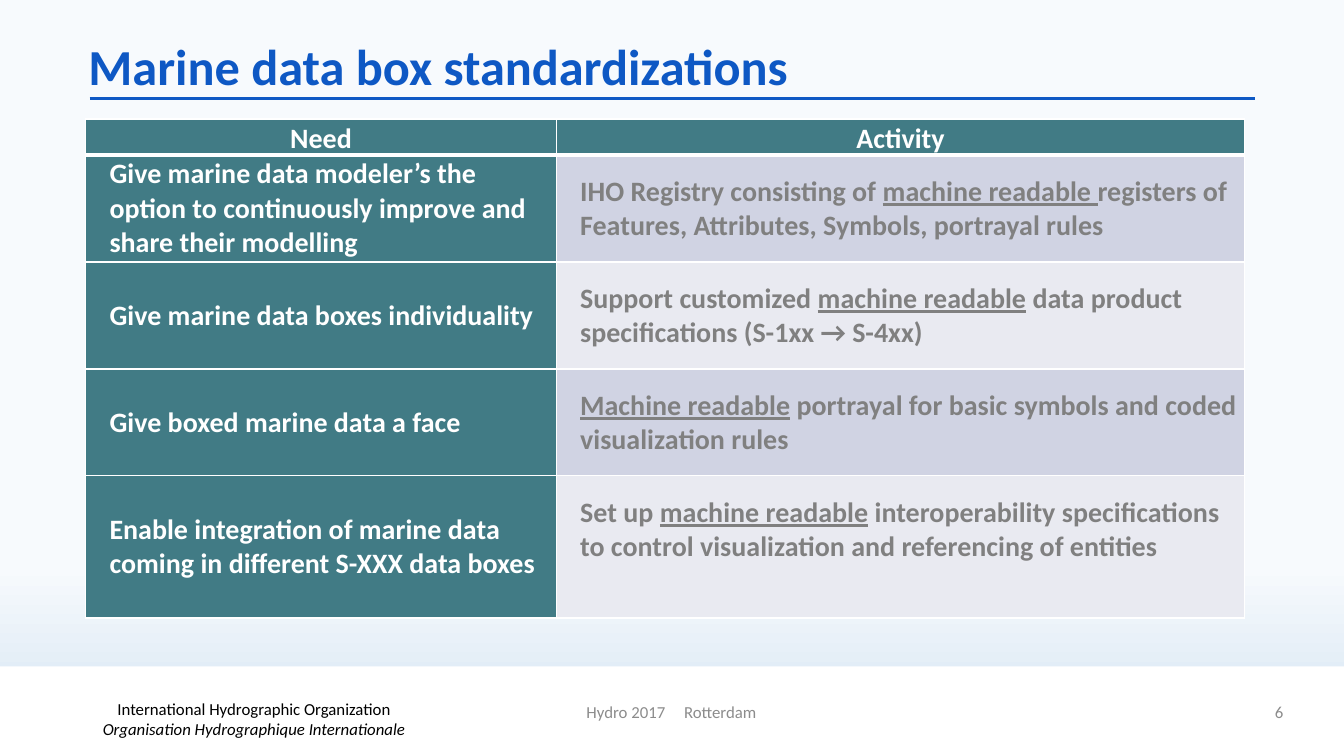
"""Builds the slide on marine data box standardizations."""
from lxml import etree
from pptx import Presentation
from pptx.dml.color import RGBColor
from pptx.enum.shapes import MSO_CONNECTOR, MSO_SHAPE
from pptx.enum.text import MSO_ANCHOR, PP_ALIGN
from pptx.oxml.ns import qn
from pptx.util import Cm, Pt

LEFT, CENTER, RIGHT = PP_ALIGN.LEFT, PP_ALIGN.CENTER, PP_ALIGN.RIGHT
MIDDLE, TOP = MSO_ANCHOR.MIDDLE, MSO_ANCHOR.TOP
STRAIGHT, RECTANGLE = MSO_CONNECTOR.STRAIGHT, MSO_SHAPE.RECTANGLE
WHITE = RGBColor(0xFF, 0xFF, 0xFF)
BLACK = RGBColor(0, 0, 0)
BLUE = RGBColor(0x0E, 0x58, 0xC4)
TEAL = RGBColor(0x41, 0x7B, 0x85)
GREY = RGBColor(0x80, 0x80, 0x80)
FOOTER_GREY = RGBColor(0x8C, 0x8C, 0x8C)
BANDS = (RGBColor(0xD0, 0xD3, 0xE3), RGBColor(0xE9, 0xEA, 0xF1))
SKY = ((0.75, RGBColor(0xF7, 0xFA, 0xFD)), (1.0, RGBColor(0xD0, 0xE2, 0xF1)))

TITLE = "Marine data box standardizations"
ORGANIZATION = ("International Hydrographic Organization",
                "Organisation Hydrographique Internationale")
EVENT = "Hydro 2017\tRotterdam"
PAGE = "6"
HEADINGS = ("Need", "Activity")
ROWS = [
    ("Give marine data modeler’s the option to continuously improve and share their modelling",
     ("IHO Registry consisting of ", "machine readable ",
      "registers of Features, Attributes, Symbols, portrayal rules")),
    ("Give marine data boxes individuality",
     ("Support customized ", "machine readable",
      " data product specifications (S-1xx → S-4xx)")),
    ("Give boxed marine data a face",
     ("", "Machine readable", " portrayal for basic symbols and coded visualization rules")),
    ("Enable integration of marine data coming in different S-XXX data boxes",
     ("Set up ", "machine readable",
      " interoperability specifications to control visualization and referencing of entities")),
]
COLUMN_WIDTHS = (11.86, 17.35)
ROW_HEIGHTS = (0.84, 2.57, 2.57, 2.57, 3.58)
SLIDE_WIDTH, SLIDE_HEIGHT = 33.87, 19.05
FOOTER_TOP, FOOTER_HEIGHT = 17.43, 1.02

TITLE_FORMAT = {"size": Pt(36), "bold": True}
CELL_FORMAT = {"size": Pt(20), "bold": True}
FOOTER_FORMAT = {"size": Pt(12)}


def add_run(paragraph, text, color, formats):
    run = paragraph.add_run()
    run.text = text
    for name, value in {"name": "Calibri", **formats}.items():
        setattr(run.font, name, value)
    run.font.color.rgb = color


def add_label(slide, box, lines, align, color, formats):
    frame = slide.shapes.add_textbox(*map(Cm, box)).text_frame
    frame.word_wrap = True
    frame.vertical_anchor = MIDDLE
    for index, line in enumerate(lines):
        paragraph = frame.add_paragraph() if index else frame.paragraphs[0]
        paragraph.alignment = align
        add_run(paragraph, line, color, {**formats, "italic": index > 0})
    return frame.paragraphs[0]


def set_borders(cell, widths):
    properties = cell._tc.get_or_add_tcPr()
    for index, (side, width) in enumerate(zip("LRTB", widths)):
        border = etree.Element(qn(f"a:ln{side}"), w=str(Pt(width)))
        fill = etree.SubElement(border, qn("a:solidFill"))
        etree.SubElement(fill, qn("a:srgbClr"), val=str(WHITE))
        properties.insert(index, border)


def fill_cell(cell, runs, color, fill, header=False, padding=0.0):
    cell.fill.solid()
    cell.fill.fore_color.rgb = fill
    cell.margin_left = cell.margin_right = Cm(0.1)
    cell.margin_top = cell.margin_bottom = Cm(padding)
    cell.vertical_anchor = TOP if header or padding else MIDDLE
    paragraph = cell.text_frame.paragraphs[0]
    if header:
        paragraph.alignment = CENTER
        paragraph.line_spacing = 1.07
    else:
        indents = paragraph._p.get_or_add_pPr()
        indents.set("marL", str(Cm(0.5)))
        indents.set("indent", "0")
    for index, text in enumerate(runs):
        if text:
            add_run(paragraph, text, color, {**CELL_FORMAT, "underline": index == 1})


def add_needs_table(slide):
    table = slide.shapes.add_table(
        len(ROWS) + 1, len(HEADINGS), Cm(2.16), Cm(3),
        Cm(sum(COLUMN_WIDTHS)), Cm(sum(ROW_HEIGHTS))).table
    for column, width in zip(table.columns, COLUMN_WIDTHS):
        column.width = Cm(width)
    for row, height in zip(table.rows, ROW_HEIGHTS):
        row.height = Cm(height)
    for column, heading in enumerate(HEADINGS):
        fill_cell(table.cell(0, column), [heading], WHITE, TEAL, header=True)
    for row, (need, activity) in enumerate(ROWS, 1):
        fill_cell(table.cell(row, 0), [need], WHITE, TEAL)
        fill_cell(table.cell(row, 1), activity, GREY, BANDS[(row - 1) % 2], padding=0.5)
    for row in range(len(ROW_HEIGHTS)):
        for column in range(len(HEADINGS)):
            set_borders(table.cell(row, column),
                        (1, 1, 3 if row == 1 else 1, 3 if row == 0 else 1))


def main():
    deck = Presentation()
    deck.slide_width, deck.slide_height = Cm(SLIDE_WIDTH), Cm(SLIDE_HEIGHT)
    slide = deck.slides.add_slide(deck.slide_layouts[6])

    background = slide.background.fill
    background.gradient()
    background.gradient_angle = 270
    for stop, (position, color) in zip(background.gradient_stops, SKY):
        stop.position = position
        stop.color.rgb = color

    rule = slide.shapes.add_connector(STRAIGHT, Cm(2.26), Cm(2.49), Cm(31.62), Cm(2.49))
    rule.line.color.rgb = BLUE
    rule.line.width = Pt(2.25)
    etree.SubElement(rule._element.spPr, qn("a:effectLst"))

    footer_band = slide.shapes.add_shape(
        RECTANGLE, 0, Cm(16.79), Cm(SLIDE_WIDTH), Cm(SLIDE_HEIGHT - 16.79))
    footer_band.shadow.inherit = False
    footer_band.fill.solid()
    footer_band.fill.fore_color.rgb = WHITE
    footer_band.line.fill.background()

    add_label(slide, (0.69, 17.6, 11.43, FOOTER_HEIGHT), ORGANIZATION, CENTER,
              BLACK, FOOTER_FORMAT)
    event = add_label(slide, (14.53, FOOTER_TOP, 6, FOOTER_HEIGHT), [EVENT], LEFT,
                      FOOTER_GREY, FOOTER_FORMAT)
    tabs = etree.SubElement(event._p.get_or_add_pPr(), qn("a:tabLst"))
    etree.SubElement(tabs, qn("a:tab"), pos=str(Cm(2.46)), algn="l")
    add_label(slide, (24.97, FOOTER_TOP, 7.62, FOOTER_HEIGHT), [PAGE], RIGHT,
              FOOTER_GREY, FOOTER_FORMAT)
    add_label(slide, (1.98, 0.9, 30.58, 1.5), [TITLE], LEFT, BLUE, TITLE_FORMAT)
    add_needs_table(slide)
    deck.save("out.pptx")


if __name__ == "__main__":
    main()
